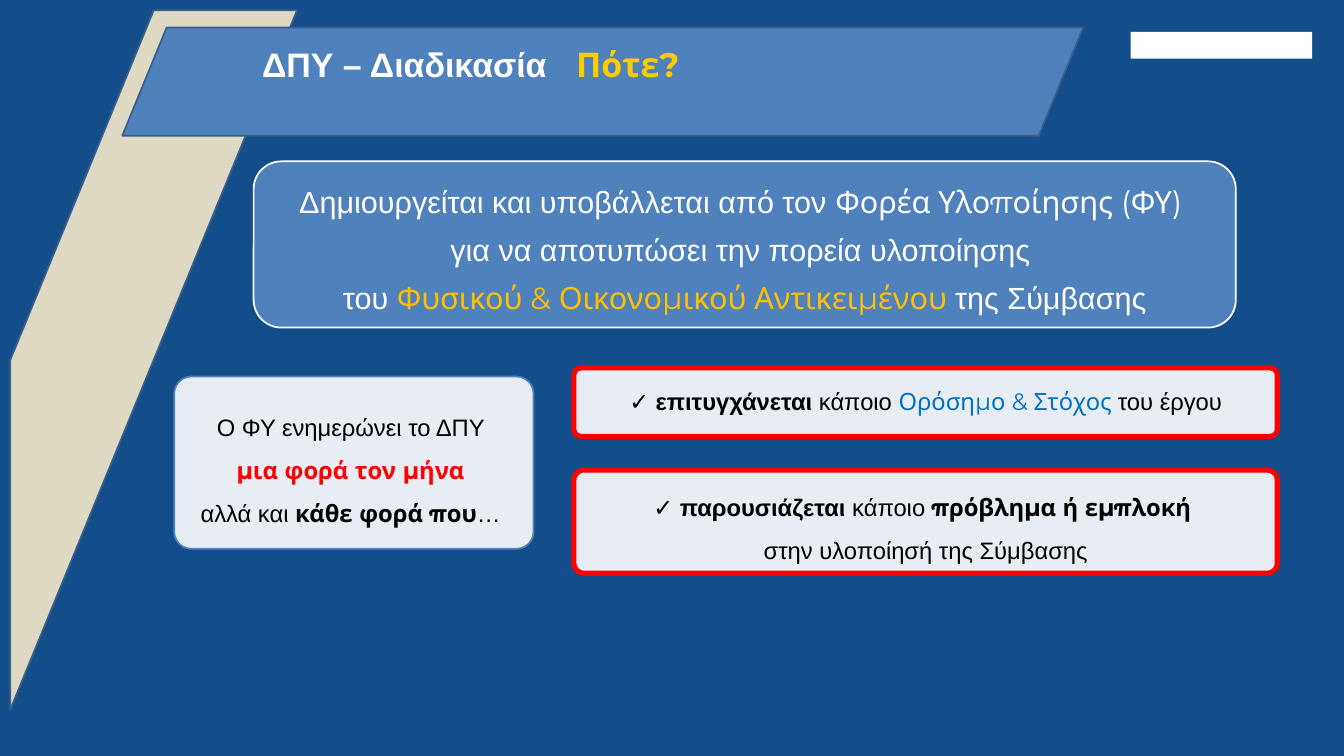
from lxml import etree
from pptx import Presentation
from pptx.dml.color import RGBColor
from pptx.enum.shapes import MSO_SHAPE
from pptx.enum.text import MSO_ANCHOR, MSO_AUTO_SIZE, PP_ALIGN
from pptx.oxml import parse_xml
from pptx.oxml.ns import nsdecls, qn
from pptx.util import Inches, Pt

NAVY = RGBColor(0x13, 0x4E, 0x8A)
BLUE = RGBColor(0x4F, 0x81, 0xBD)
EDGE = RGBColor(0x3A, 0x5F, 0x8C)
SAND = RGBColor(0xDD, 0xD9, 0xC3)
WHITE = RGBColor(0xFF, 0xFF, 0xFF)
BLACK = RGBColor(0x00, 0x00, 0x00)
RED = RGBColor(0xFF, 0x00, 0x00)
LINK_BLUE = RGBColor(0x00, 0x70, 0xC0)
YELLOW = RGBColor(0xFF, 0xCC, 0x00)
AMBER = RGBColor(0xFF, 0xC0, 0x00)
BODY, ACCENT = "Arial", "Montserrat"

deck = Presentation()
deck.slide_width, deck.slide_height = Inches(21.99), Inches(12.37)
COL, ROW = deck.slide_width / 100, deck.slide_height / 100
slide = deck.slides.add_slide(deck.slide_layouts[6])
slide.background.fill.solid()
slide.background.fill.fore_color.rgb = NAVY


def add_block(preset, area, fill, edge=None, weight=2, corner=None):
    """Draw a preset; area is left, top, width, height in columns and rows."""
    left, top, width, height = area
    block = slide.shapes.add_shape(preset, int(left * COL), int(top * ROW),
                                   int(width * COL), int(height * ROW))
    block.shadow.inherit = False
    block.fill.solid()
    block.fill.fore_color.rgb = fill
    if edge is None:
        block.line.fill.background()
    else:
        block.line.color.rgb = edge
        block.line.width = Pt(weight)
    if corner is not None:
        block.adjustments[0] = corner
    return block


def write(frame, lines, size, spacing=1.0, align=PP_ALIGN.CENTER):
    """Fill a frame with lines of (text, font, colour, bold) pieces."""
    frame.word_wrap = True
    for number, pieces in enumerate(lines):
        paragraph = frame.add_paragraph() if number else frame.paragraphs[0]
        paragraph.alignment = align
        paragraph.line_spacing = spacing
        for text, font, colour, bold in pieces:
            run = paragraph.add_run()
            run.text = text
            run.font.name, run.font.size = font, Pt(size)
            run.font.bold = bold
            run.font.color.rgb = colour


# Header
add_block(MSO_SHAPE.RECTANGLE, (84.13, 4.2, 13.51, 3.56), WHITE)
add_block(MSO_SHAPE.DIAGONAL_STRIPE, (0.77, 1.37, 21.33, 92.48), SAND, EDGE)
add_block(MSO_SHAPE.PARALLELOGRAM, (9.1, 3.64, 71.49, 14.31), BLUE, EDGE, corner=0.41)

title = slide.shapes.add_textbox(int(19.05 * COL), int(5.42 * ROW),
                                 int(53.02 * COL), int(6.22 * ROW)).text_frame
title.auto_size = MSO_AUTO_SIZE.SHAPE_TO_FIT_TEXT
title_tabs = etree.SubElement(title.paragraphs[0]._p.get_or_add_pPr(), qn("a:tabLst"))
etree.SubElement(title_tabs, qn("a:tab"), pos=str(Inches(5.14)), algn="l")
write(title, [[("ΔΠΥ – Διαδικασία\t", BODY, WHITE, True),
               ("Πότε?", ACCENT, YELLOW, True)]], 40, align=PP_ALIGN.LEFT)

# Update rule and its two triggers
cards = [
    ((12.96, 49.8, 26.74, 22.8), BLUE, 2, MSO_ANCHOR.MIDDLE, [
        [("Ο ΦΥ ενημερώνει το ΔΠΥ ", BODY, BLACK, False)],
        [("μια φορά τον μήνα ", ACCENT, RED, True)],
        [("αλλά και ", BODY, BLACK, False),
         ("κάθε φορά που", ACCENT, BLACK, True),
         ("… ", BODY, BLACK, False)]]),
    ((42.7, 48.67, 52.34, 9.05), RED, 6, MSO_ANCHOR.TOP, [
        [("✓ ", BODY, BLACK, False),
         ("επιτυγχάνεται ", BODY, BLACK, True),
         ("κάποιο ", BODY, BLACK, False),
         ("Ορόσημο & Στόχος ", ACCENT, LINK_BLUE, False),
         ("του έργου", BODY, BLACK, False)]]),
    ((42.7, 62.17, 52.34, 13.66), RED, 6, MSO_ANCHOR.MIDDLE, [
        [("✓ ", BODY, BLACK, False),
         ("παρουσιάζεται", BODY, BLACK, True),
         (" κάποιο ", BODY, BLACK, False),
         ("πρόβλημα ή εμπλοκή ", ACCENT, BLACK, True)],
        [("στην υλοποίησή της Σύμβασης", BODY, BLACK, False)]]),
]
for area, edge, weight, anchor, lines in cards:
    card = add_block(MSO_SHAPE.ROUNDED_RECTANGLE, area, WHITE, edge, weight, 0.1)
    card_colour = card.fill._xPr.find(qn("a:solidFill"))[0]
    etree.SubElement(card_colour, qn("a:alpha"), val="90000")
    card.text_frame.vertical_anchor = anchor
    write(card.text_frame, lines, 28, 1.5)

# Purpose panel
purpose = add_block(MSO_SHAPE.ROUNDED_RECTANGLE, (18.87, 21.34, 73.08, 21.99), BLUE, WHITE)
purpose.text_frame.vertical_anchor = MSO_ANCHOR.TOP
write(purpose.text_frame, [
    [("Δημιουργείται και υποβάλλεται από τον ", BODY, WHITE, False),
     ("Φορέα Υλοποίησης (ΦΥ) ", ACCENT, WHITE, False)],
    [("για να αποτυπώσει την πορεία υλοποίησης ", BODY, WHITE, False)],
    [("του ", BODY, WHITE, False),
     ("Φυσικού & Οικονομικού Αντικειμένου ", ACCENT, AMBER, False),
     ("της Σύμβασης", BODY, WHITE, False)]], 36, 1.3)
for paragraph in purpose.text_frame.paragraphs:
    for run in paragraph.runs:
        run._r.rPr.find(qn("a:solidFill")).addnext(parse_xml(
            f'<a:effectLst {nsdecls("a")}><a:outerShdw blurRad="38100" dist="38100" '
            'dir="2700000" algn="tl"><a:srgbClr val="000000"><a:alpha val="43000"/>'
            '</a:srgbClr></a:outerShdw></a:effectLst>'))

deck.save("out.pptx")
